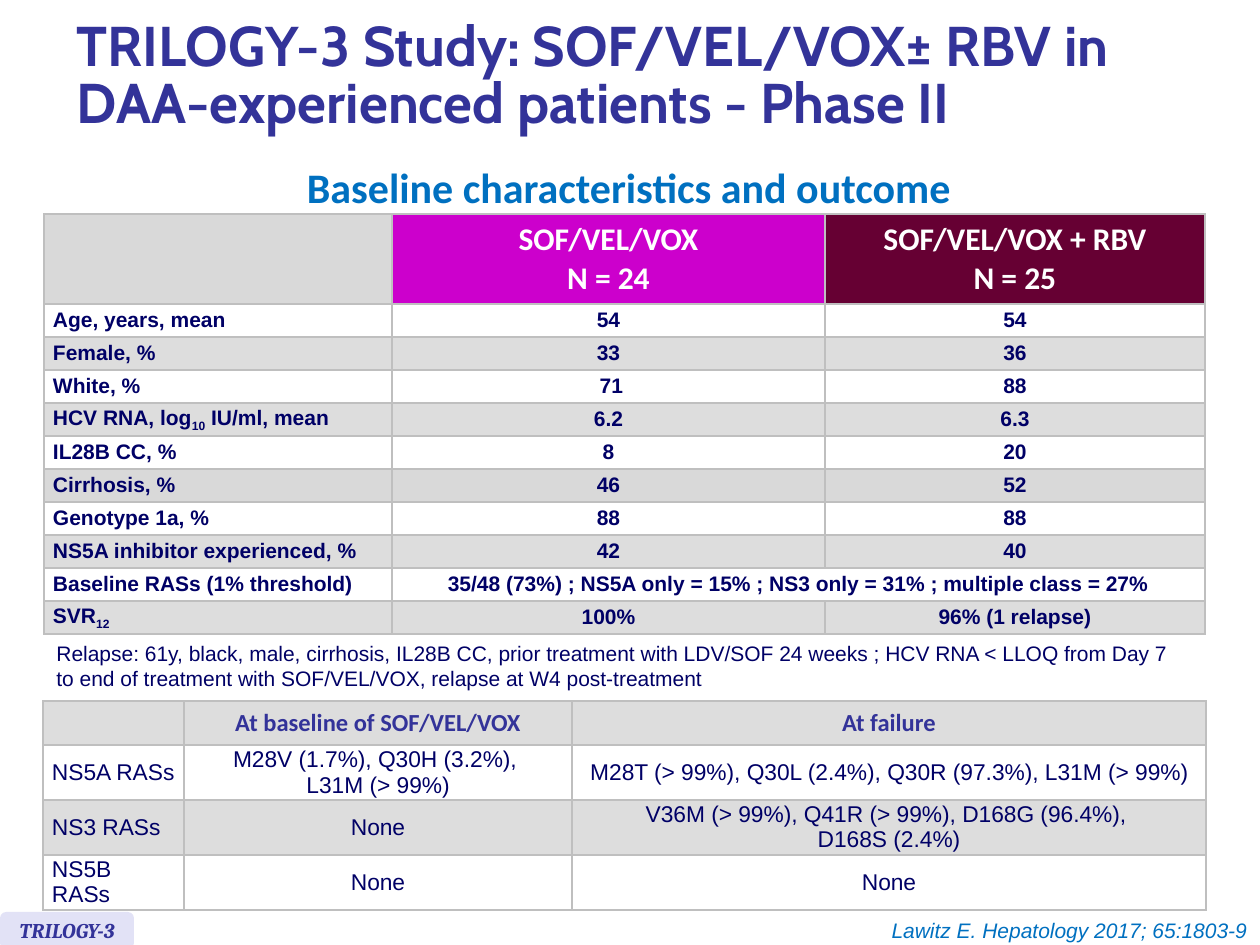
from lxml.etree import SubElement
from pptx import Presentation
from pptx.dml.color import RGBColor
from pptx.enum.shapes import MSO_SHAPE as Shape
from pptx.enum.text import MSO_ANCHOR as Anchor, MSO_AUTO_SIZE as AutoSize, PP_ALIGN as Align
from pptx.oxml.ns import qn
from pptx.util import Emu, Pt

EMU_PER_PX = 914400 / 126
NAVY, INDIGO, BLUE, WHITE, GRAY, MID_GRAY = "000066", "333399", "0070C0", "FFFFFF", "DDDDDD", "D9D9D9"
BORDER = "BFBFBF"

TITLE = dict(name="Cabin", size=32, color=INDIGO, bold=True)
SUBTITLE = dict(name="Calibri", size=24, color=BLUE, bold=True)
ARM_HEADER = dict(name="Calibri", size=18, color=WHITE, bold=True)
BASELINE_BODY = dict(name="Arial", size=12, color=NAVY, bold=True)
NOTE = dict(name="Arial", size=12, color=NAVY)
RAS_HEADER = dict(name="Calibri", size=14, color=INDIGO, bold=True)
RAS_BODY = dict(name="Arial", size=13, color=NAVY, bold=False)
TAG = dict(name="Cambria", size=12, color=INDIGO, bold=True, italic=True)
CITATION = dict(name="Arial", size=12, color=BLUE, italic=True)

BASELINE_ROWS = [
    ("", "SOF/VEL/VOX\nN = 24", "SOF/VEL/VOX + RBV\nN = 25"),
    ("Age, years, mean", "54", "54"),
    ("Female, %", "33", "36"),
    ("White, %", " 71", "88"),
    ("HCV RNA, log_10_ IU/ml, mean", "6.2", "6.3"),
    ("IL28B CC, %", "8", "20"),
    ("Cirrhosis, %", "46", "52"),
    ("Genotype 1a, %", "88", "88"),
    ("NS5A inhibitor experienced, %", "42", "40"),
    ("Baseline RASs (1% threshold)",
     "35/48 (73%) ; NS5A only = 15% ; NS3 only = 31% ; multiple class = 27%", ""),
    ("SVR_12", "100%", "96% (1 relapse)"),
]
RAS_ROWS = [
    ("", "At baseline of SOF/VEL/VOX", "At failure"),
    ("NS5A RASs", "M28V (1.7%), Q30H (3.2%), \vL31M (> 99%)",
     "M28T (> 99%), Q30L (2.4%), Q30R (97.3%), L31M (> 99%)"),
    ("NS3 RASs", "None", "V36M (> 99%), Q41R (> 99%), D168G (96.4%), \vD168S (2.4%)"),
    ("NS5B RASs", "None", "None"),
]


def px(*lengths):
    """Turn pixel lengths into EMU."""
    return [Emu(round(length * EMU_PER_PX)) for length in lengths]


def rgb(value):
    """Turn a hex string into a colour."""
    return RGBColor.from_string(value)


def paint(target, color):
    """Give a shape or cell a solid fill."""
    target.fill.solid()
    target.fill.fore_color.rgb = rgb(color)


def add_run(paragraph, text, style, subscript=False):
    """Add one formatted run."""
    run = paragraph.add_run()
    run.text = text
    for key, value in style.items():
        if key == "color":
            run.font.color.rgb = rgb(value)
        else:
            setattr(run.font, key, Pt(value) if key == "size" else value)
    if subscript:
        run.font._element.set("baseline", "-25000")


def write(frame, text, style, align=Align.LEFT, spacing=None):
    """Write paragraphs, with \\v as line break and _ around subscripts."""
    for index, content in enumerate(text.split("\n")):
        paragraph = frame.add_paragraph() if index else frame.paragraphs[0]
        paragraph.alignment = align
        if spacing:
            paragraph.line_spacing = spacing
        for number, line in enumerate(content.split("\v")):
            if number:
                paragraph.add_line_break()
            for order, part in enumerate(line.split("_")):
                add_run(paragraph, part, style, subscript=order % 2 == 1)


def add_text(slide, box, text, style, align=Align.LEFT, wrap=True, grow=True, spacing=None):
    """Add a text box."""
    frame = slide.shapes.add_textbox(*px(*box)).text_frame
    frame.word_wrap = wrap
    if grow:
        frame.auto_size = AutoSize.SHAPE_TO_FIT_TEXT
    else:
        frame.vertical_anchor = Anchor.MIDDLE
    write(frame, text, style, align, spacing)


def add_tag(slide, box, text):
    """Add the rounded study tag."""
    tag = slide.shapes.add_shape(Shape.ROUNDED_RECTANGLE, *px(*box))
    tag.shadow.inherit = False
    paint(tag, "E2E2F6")
    tag.line.fill.background()
    tag.text_frame.word_wrap = False
    tag.text_frame.vertical_anchor = Anchor.MIDDLE
    write(tag.text_frame, text, TAG, Align.CENTER)


def add_borders(cell):
    """Draw a thin line on each side of a cell."""
    properties = cell._tc.get_or_add_tcPr()
    for position, side in enumerate(("lnL", "lnR", "lnT", "lnB")):
        line = SubElement(properties, qn(f"a:{side}"), w="12700")
        fill = SubElement(line, qn("a:solidFill"))
        SubElement(fill, qn("a:srgbClr"), val=BORDER)
        properties.insert(position, line)


def add_grid(slide, corner, widths, heights, rows, header, body, inset, fill_of):
    """Add a bordered table with left labels and centred values."""
    box = px(*corner, sum(widths), sum(heights))
    table = slide.shapes.add_table(len(rows), len(widths), *box).table
    table.first_row = table.horz_banding = False
    for column, width in zip(table.columns, px(*widths)):
        column.width = width
    for row, height in zip(table.rows, px(*heights)):
        row.height = height
    for r, texts in enumerate(rows):
        for c, text in enumerate(texts):
            cell = table.cell(r, c)
            side = px(9 if r else inset)[0]
            margins = dict(margin_left=side, margin_right=side, margin_top=0, margin_bottom=0)
            for key, value in margins.items():
                setattr(cell, key, value)
            cell.vertical_anchor = Anchor.MIDDLE
            paint(cell, fill_of(r, c))
            add_borders(cell)
            if text:
                write(cell.text_frame, text, body if r else header,
                      Align.CENTER if c else Align.LEFT)
    return table


def baseline_fill(row, column):
    """Colour the treatment arms and band the rows below."""
    if row == 0:
        return (MID_GRAY, "CC00CC", "660033")[column]
    if row == 6:
        return MID_GRAY
    return WHITE if row % 2 else GRAY


def ras_fill(row, column):
    """Band the rows, starting with gray."""
    return WHITE if row % 2 else GRAY


def main():
    """Build the slide."""
    presentation = Presentation()
    presentation.slide_width, presentation.slide_height = px(1260, 945)
    slide = presentation.slides.add_slide(presentation.slide_layouts[6])
    baseline = add_grid(slide, (44, 214), (348, 433, 380), [90] + [33] * 10,
                        BASELINE_ROWS, ARM_HEADER, BASELINE_BODY, 13, baseline_fill)
    baseline.cell(9, 1).merge(baseline.cell(9, 2))
    add_text(slide, (290, 155, 678, 63), "Baseline characteristics and outcome",
             SUBTITLE, Align.CENTER, wrap=False)
    add_text(slide, (44, 634, 1150, 63),
             "Relapse: 61y, black, male, cirrhosis, IL28B CC, prior treatment with LDV/SOF 24 weeks ; "
             "HCV RNA < LLOQ from Day 7 to end of treatment with SOF/VEL/VOX, relapse at W4 post-treatment",
             NOTE)
    add_grid(slide, (43, 701), (141, 388, 634), [44] + [55] * 3,
             RAS_ROWS, RAS_HEADER, RAS_BODY, 9, ras_fill)
    add_text(slide, (64, 10, 1181, 135),
             "TRILOGY-3 Study: SOF/VEL/VOX± RBV in DAA-experienced patients - Phase II",
             TITLE, grow=False, spacing=0.85)
    add_tag(slide, (0, 912, 134, 37), "TRILOGY-3")
    add_text(slide, (876, 911, 384, 38), "Lawitz E. Hepatology 2017; 65:1803-9",
             CITATION, Align.RIGHT, wrap=False)
    presentation.save("out.pptx")


if __name__ == "__main__":
    main()
